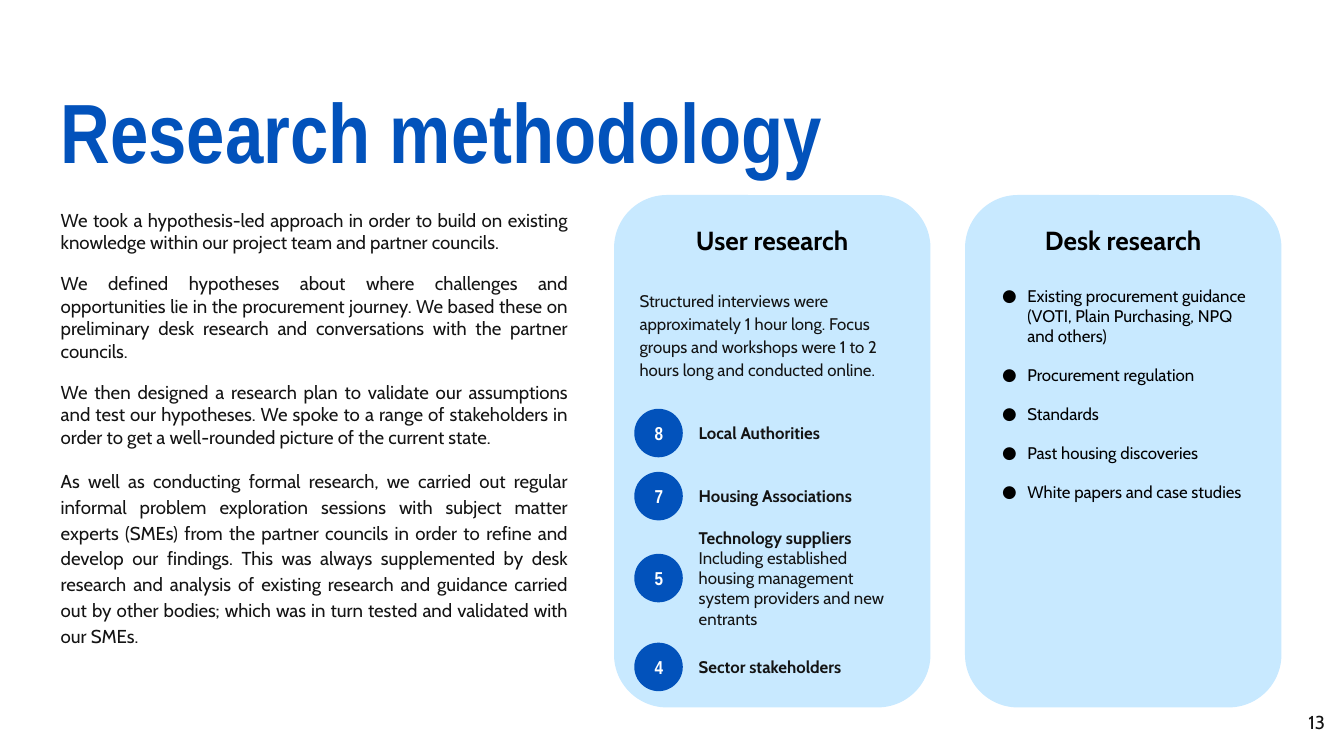
from lxml import etree
from pptx import Presentation
from pptx.dml.color import RGBColor
from pptx.enum import shapes, text
from pptx.oxml.ns import qn
from pptx.util import Pt

BLUE = RGBColor(0x02, 0x52, 0xBB)
PALE = RGBColor(0xC8, 0xE9, 0xFF)
INK = RGBColor(0x14, 0x14, 0x14)
BLACK = RGBColor(0, 0, 0)
WHITE = RGBColor(255, 255, 255)
HEAD, BODY = "Arial Narrow", "Cabin"
LEFT, RIGHT, MID = text.PP_ALIGN.LEFT, text.PP_ALIGN.RIGHT, text.PP_ALIGN.CENTER
JUST = text.PP_ALIGN.JUSTIFY
TOP, CENTER = text.MSO_ANCHOR.TOP, text.MSO_ANCHOR.MIDDLE
ROUND, OVAL = shapes.MSO_SHAPE.ROUNDED_RECTANGLE, shapes.MSO_SHAPE.OVAL

METHOD = [
    "We took a hypothesis-led approach in order to build on existing knowledge "
    "within our project team and partner councils.",
    "We defined hypotheses about where challenges and opportunities lie in the "
    "procurement journey. We based these on preliminary desk research and "
    "conversations with the partner councils.",
    "We then designed a research plan to validate our assumptions and test our "
    "hypotheses. We spoke to a range of stakeholders in order to get a "
    "well-rounded picture of the current state.",
    "As well as conducting formal research, we carried out regular informal "
    "problem exploration sessions with subject matter experts (SMEs) from the "
    "partner councils in order to refine and develop our findings. This was "
    "always supplemented by desk research and analysis of existing research and "
    "guidance carried out by other bodies; which was in turn tested and "
    "validated with our SMEs.",
]
FORMAT = ("Structured interviews were approximately 1 hour long. Focus groups and "
          "workshops were 1 to 2 hours long and conducted online.")
# count, name, detail, top of the disc within the panel
GROUPS = [
    ("8", "Local Authorities", "", 114.5),
    ("7", "Housing Associations", "", 148.3),
    ("5", "Technology suppliers", "Including established housing management "
     "system providers and new entrants", 192.2),
    ("4", "Sector stakeholders", "", 239.8),
]
SOURCES = [
    "Existing procurement guidance\n(VOTI, Plain Purchasing, NPQ and others)",
    "Procurement regulation",
    "Standards",
    "Past housing discoveries",
    "White papers and case studies",
]


def say(frame, words, size=9, font=BODY, color=INK, bold=False, align=LEFT,
        before=0, after=0, line=1.0, bullet=False, join=False):
    """Add a paragraph, or with join a new line of the last one."""
    para = frame.paragraphs[-1]
    if para.runs and not join:
        para = frame.add_paragraph()
    if not join:
        para.alignment, para.line_spacing = align, line
        para.space_before, para.space_after = Pt(before), Pt(after)
        mark(para, bullet)
    for part in words.split("\n"):
        if para.runs:
            para.add_line_break()
        run = para.add_run()
        run.text = part
        run.font.size, run.font.name, run.font.bold = Pt(size), font, bold
        run.font.color.rgb = color


def mark(para, bullet):
    """Set or clear the bullet and its hanging indent."""
    props = para._p.get_or_add_pPr()
    props.set("marL", str(Pt(18 if bullet else 0)))
    props.set("indent", str(Pt(-13.5 if bullet else 0)))
    if bullet:
        etree.SubElement(props, qn("a:buFont")).set("typeface", BODY)
        etree.SubElement(props, qn("a:buChar")).set("char", "●")
    else:
        etree.SubElement(props, qn("a:buNone"))


def setup(frame, side=7.2, anchor=TOP):
    frame.word_wrap, frame.auto_size = True, text.MSO_AUTO_SIZE.NONE
    frame.vertical_anchor = anchor
    frame.margin_left = frame.margin_right = Pt(side)
    frame.margin_top = frame.margin_bottom = Pt(7.2)
    return frame


def label(slide, box, anchor=TOP):
    return setup(slide.shapes.add_textbox(*map(Pt, box)).text_frame, anchor=anchor)


def shape(slide, kind, box, fill):
    item = slide.shapes.add_shape(kind, *map(Pt, box))
    item.shadow.inherit = False
    item.fill.solid()
    item.fill.fore_color.rgb = fill
    item.line.fill.background()
    return item


def holder(item, box):
    item.left, item.top, item.width, item.height = map(Pt, box)
    return setup(item.text_frame, side=0)


def title(slide, box):
    say(holder(slide.shapes.title, box), "Research methodology", size=45,
        font=HEAD, color=BLUE, bold=True)


def method(slide, box):
    frame = holder(slide.placeholders[1], box)
    for i, words in enumerate(METHOD):
        last = i == len(METHOD) - 1
        say(frame, words, size=10, align=JUST, before=10 if i else 0,
            line=1.15 if last else 1.0)


def panel(slide, box, name):
    item = shape(slide, ROUND, box, PALE)
    item.adjustments[0] = 0.167
    frame = setup(item.text_frame)
    say(frame, name, size=14, color=BLACK, bold=True, align=MID, after=6)
    return frame


def group(slide, box, count, name, detail):
    """Draw a numbered disc with its label centred beside it."""
    x, y, w, disc = box
    item = shape(slide, OVAL, (x, y, disc, disc), BLUE)
    say(setup(item.text_frame, anchor=CENTER), count, size=10, font=HEAD,
        color=WHITE, bold=True, align=MID)
    high = 69 if detail else 25
    side = (x + 27.4, y + (disc - high) / 2, w - 27.4, high)
    frame = label(slide, side, CENTER)
    say(frame, name, bold=True)
    if detail:
        say(frame, detail, join=True)


def users(slide, box):
    x, y, w, h = box
    panel(slide, box, "User research")
    say(label(slide, (x + 6.5, y + 42.2, 157, 63.4)), FORMAT, line=1.15)
    for count, name, detail, top in GROUPS:
        group(slide, (x + 10.8, y + top, 145.4, 26), count, name, detail)


def desk(slide, box):
    frame = panel(slide, box, "Desk research")
    for words in SOURCES:
        say(frame, words, color=BLACK, before=10, bullet=True)


def main():
    deck = Presentation()
    deck.slide_width, deck.slide_height = Pt(720), Pt(405)
    slide = deck.slides.add_slide(deck.slide_layouts[1])
    top, high = 104.5, 274.5
    title(slide, (32.5, 35.3, 559, 47.5))
    method(slide, (32.5, top, 271.5, high))
    users(slide, (329, top, 169.5, high))
    desk(slide, (517, top, 169.5, high))
    say(label(slide, (674, 373.7, 43, 31)), "13", size=10, align=RIGHT)
    deck.save("out.pptx")


if __name__ == "__main__":
    main()
